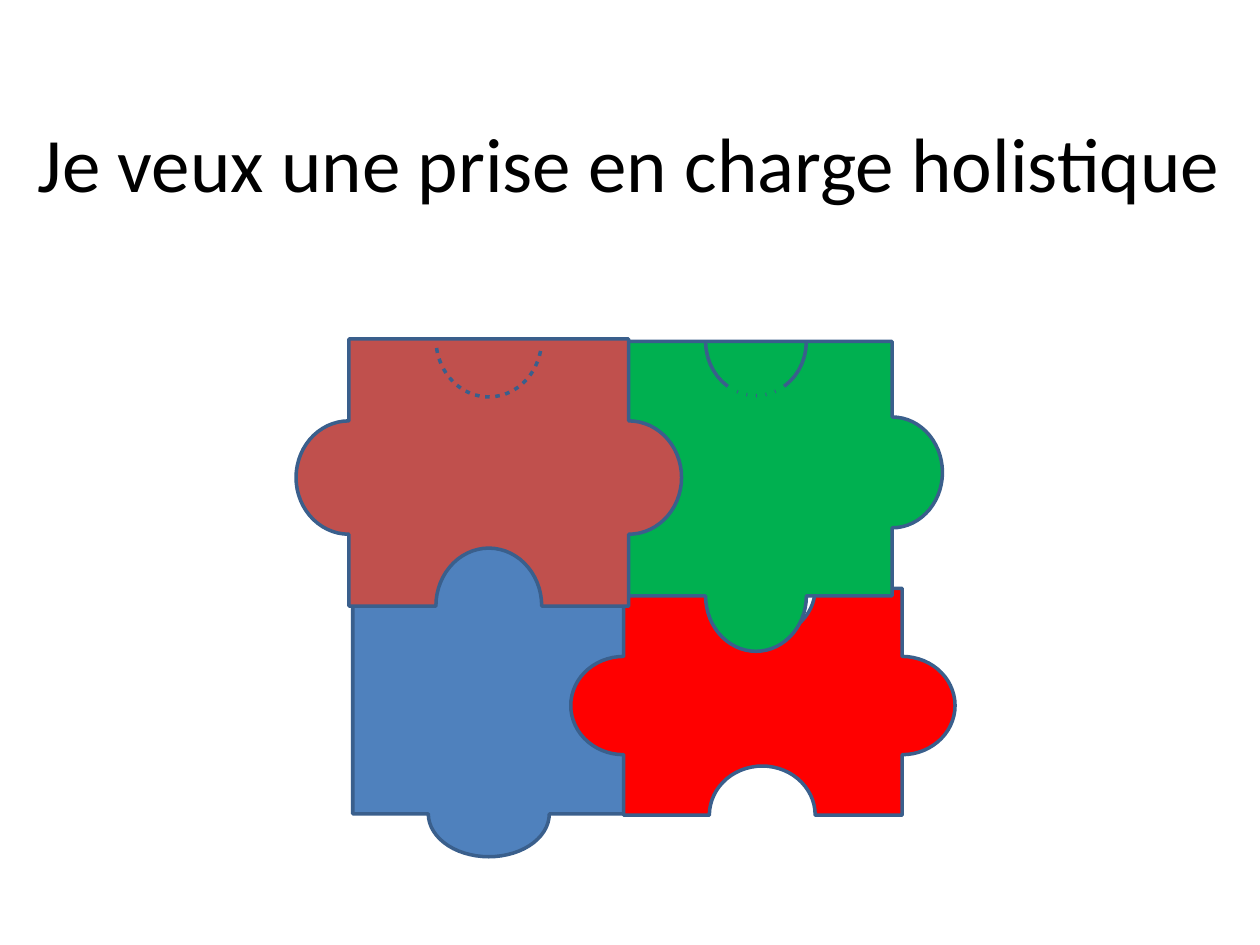
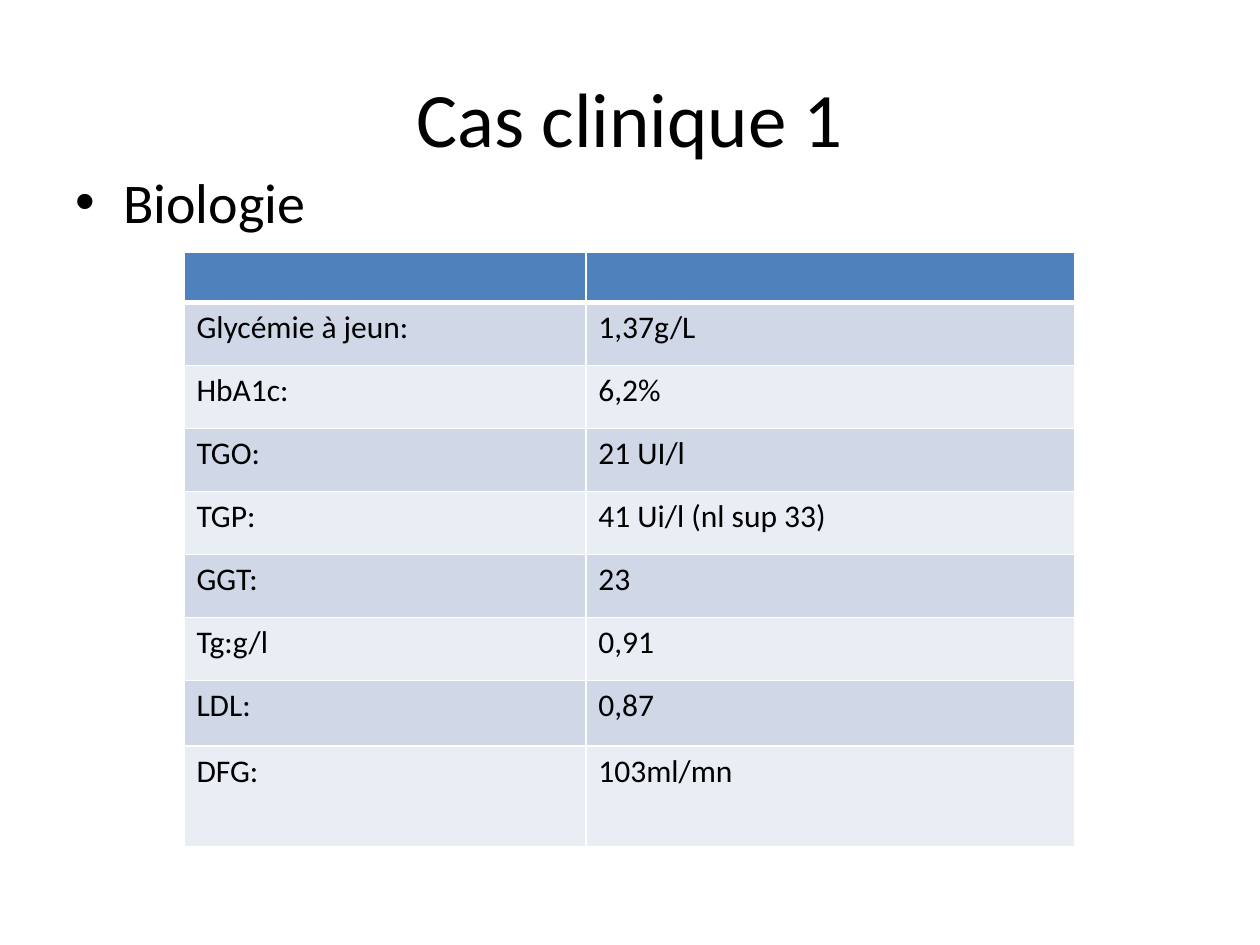
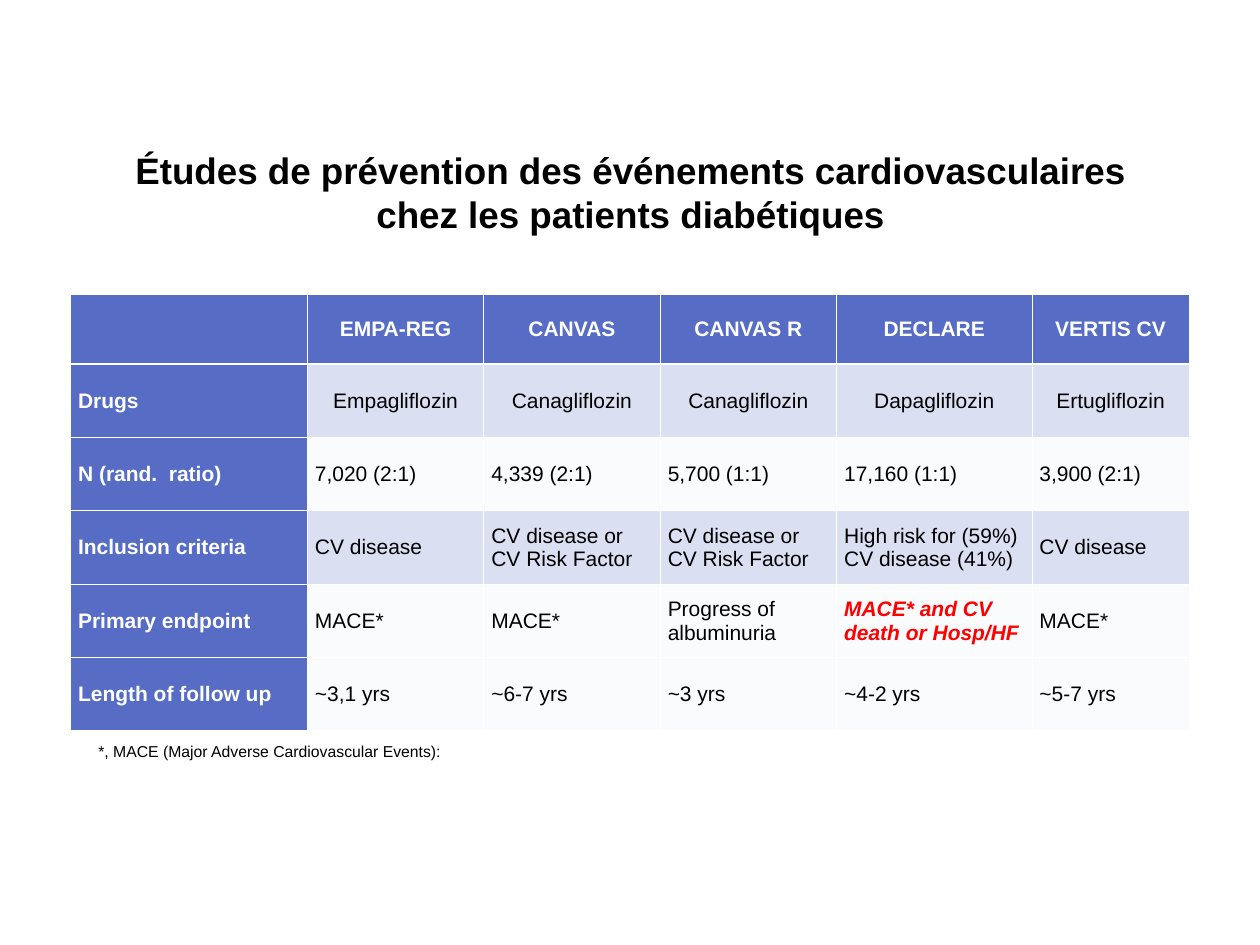
"""Build three slides on diabetes care: a puzzle, lab results and a trial table."""
from dataclasses import dataclass
from math import cos, radians, sin
from typing import Any, NamedTuple

from lxml.etree import SubElement as Sub
from pptx import Presentation
from pptx.dml.color import RGBColor as RGB
from pptx.enum.text import MSO_ANCHOR as Anchor
from pptx.enum.text import MSO_AUTO_SIZE as Auto
from pptx.enum.text import PP_ALIGN as Align
from pptx.oxml.ns import qn
from pptx.slide import Slide
from pptx.util import Emu, Pt

PX = 9144
BLACK = RGB(0x00, 0x00, 0x00)
WHITE = RGB(0xFF, 0xFF, 0xFF)
RED = RGB(0xFF, 0x00, 0x00)
GREEN = RGB(0x00, 0xB0, 0x50)
BRICK = RGB(0xC0, 0x50, 0x4D)
BLUE = RGB(0x4F, 0x81, 0xBD)
NAVY = RGB(0x3A, 0x5F, 0x8C)
MIST = RGB(0xD0, 0xD8, 0xE8)
PALE = RGB(0xE9, 0xED, 0xF4)
INDIGO = RGB(0x56, 0x6C, 0xC5)
LILAC = RGB(0xDA, 0xDF, 0xF2)
SNOW = RGB(0xF9, 0xFB, 0xFD)

Spans = list[tuple[int, int]]
Point = tuple[float, float]


class Box(NamedTuple):
    left: int
    top: int
    width: int
    height: int


class Font(NamedTuple):
    name: str
    size: int
    color: RGB = BLACK
    bold: bool = False
    italic: bool = False


class Oval(NamedTuple):
    x: int
    y: int
    rx: int
    ry: int

    def point(self, angle: float) -> Point:
        """Give the point of the oval at an angle in degrees."""
        turn = radians(angle)
        return self.x + self.rx * cos(turn), self.y + self.ry * sin(turn)


class Knob(NamedTuple):
    oval: Oval
    out: bool = True


class Trace(NamedTuple):
    oval: Oval
    spans: Spans


@dataclass
class Piece:
    fill: RGB
    box: Box
    knobs: list[Knob | None]
    traces: tuple[Trace, ...] = ()


@dataclass
class Grid:
    left: int
    top: int
    cols: list[int]
    rows: list[int]
    text: list[tuple[str, ...]]
    fills: list[RGB]
    font: Font
    edge: float
    pads: tuple[int, int]
    anchor: Anchor
    side: RGB | None = None
    mid: int = 0
    key: str = ""


HEAD = Font("Calibri", 44)
SMALL = Font("Arial", 12)

PUZZLE = [
    Piece(BLUE, Box(280, 466, 223, 180), [
        Knob(Oval(388, 466, 48, 33)), Knob(Oval(503, 557, 43, 34), False),
        Knob(Oval(388, 646, 48, 34)), None]),
    Piece(RED, Box(495, 467, 221, 180), [
        Knob(Oval(605, 467, 42, 39), False), Knob(Oval(716, 560, 42, 39)),
        Knob(Oval(605, 647, 42, 39), False), Knob(Oval(495, 560, 42, 39))]),
    Piece(GREEN, Box(493, 271, 215, 202), [
        None, Knob(Oval(708, 375, 40, 44)),
        Knob(Oval(600, 473, 40, 44)), Knob(Oval(493, 379, 41, 44), False)], (
            Trace(Oval(600, 271, 40, 43),
                  [(a, 8) for a in (*range(0, 56, 8), *range(124, 180, 8))]
                  + [(a, 1) for a in range(67, 115, 11)]),
            Trace(Oval(493, 375, 40, 43), [(a, 10) for a in range(180, 270, 10)]))),
    Piece(BRICK, Box(277, 269, 222, 212), [
        None, Knob(Oval(499, 379, 42, 45)),
        Knob(Oval(388, 481, 42, 46), False), Knob(Oval(277, 379, 42, 45))], (
            Trace(Oval(388, 269, 42, 46), [(a, 5) for a in range(12, 170, 11)]),)),
]

LABS = Grid(
    146, 200, [319, 388], [37] + [50] * 6 + [52, 80],
    [("", ""), ("Glycémie à jeun:", "1,37g/L"), ("HbA1c:", "6,2%"),
     ("TGO:", "21 UI/l"), ("TGP:", "41 Ui/l (nl sup 33)"), ("GGT:", "23"),
     ("Tg:g/l", "0,91"), ("LDL:", "0,87"), ("DFG:", "103ml/mn")],
    [BLUE] + [MIST, PALE] * 4, Font("Calibri", 18), 1, (10, 5), Anchor.TOP)

TRIALS = Grid(
    56, 234, [188, 140, 140, 140, 155, 125], [55, 58, 58, 59, 58, 58],
    [("", "EMPA-REG", "CANVAS", "CANVAS R", "DECLARE", "VERTIS CV"),
     ("Drugs", "Empagliflozin", "Canagliflozin", "Canagliflozin",
      "Dapagliflozin", "Ertugliflozin"),
     ("N (rand.  ratio)", "7,020 (2:1)", "4,339 (2:1)", "5,700 (1:1)",
      "17,160 (1:1)", "3,900 (2:1)"),
     ("Inclusion criteria", "CV disease", "CV disease or CV Risk Factor",
      "CV disease or CV Risk Factor", "High risk for (59%) CV disease (41%)",
      "CV disease"),
     ("Primary endpoint", "MACE*", "MACE*", "Progress of albuminuria",
      "MACE* and CV death or Hosp/HF", "MACE*"),
     ("Length of follow up", "~3,1 yrs", "~6-7 yrs", "~3 yrs", "~4-2 yrs",
      "~5-7 yrs")],
    [INDIGO, LILAC, SNOW, LILAC, SNOW, SNOW], SMALL, 0.5, (6, 2),
    Anchor.MIDDLE, INDIGO, 2, "MACE* and CV death or Hosp/HF")


def px(count: float) -> Emu:
    """Turn px into EMU."""
    return Emu(round(count * PX))


def style(item: Any, values: dict[str, Any]) -> None:
    """Set each attribute named in the values."""
    for name, value in values.items():
        setattr(item, name, value)


def place(shape: Any, box: Box) -> None:
    """Move and size a shape."""
    style(shape, {name: px(size) for name, size in box._asdict().items()})


def write(frame: Any, text: str, font: Font, align: Align = Align.LEFT) -> None:
    """Put one formatted paragraph in a text frame."""
    para = frame.paragraphs[0]
    para.text = text
    para.alignment = align
    for run in para.runs:
        style(run.font, {"name": font.name, "size": Pt(font.size),
                         "bold": font.bold, "italic": font.italic})
        run.font.color.rgb = font.color


def start(deck: Any, text: str, box: Box, font: Font = HEAD) -> Slide:
    """Add a slide with its title."""
    slide = deck.slides.add_slide(deck.slide_layouts[5])
    title = slide.shapes.title
    place(title, box)
    style(title.text_frame, {"auto_size": Auto.NONE, "word_wrap": True,
                             "vertical_anchor": Anchor.MIDDLE})
    write(title.text_frame, text, font, Align.CENTER)
    return slide


def note(slide: Slide, text: str, box: Box, font: Font, pad: bool = True) -> Any:
    """Add a wrapped text box and return its paragraph."""
    frame = slide.shapes.add_textbox(*map(px, box)).text_frame
    frame.word_wrap = True
    if not pad:
        style(frame, {f"margin_{side}": 0
                      for side in ("left", "right", "top", "bottom")})
    write(frame, text, font)
    return frame.paragraphs[0]


def bullet(para: Any, indent: int) -> None:
    """Give a paragraph a hanging round bullet."""
    props = para._p.get_or_add_pPr()
    props.set("marL", str(px(indent)))
    props.set("indent", str(px(-indent)))
    Sub(props, qn("a:buFont"), typeface="Arial")
    Sub(props, qn("a:buChar"), char="•")


def outline(piece: Piece) -> list[Point]:
    """Walk round a piece clockwise from its top left corner."""
    left, top, width, height = piece.box
    right, base = left + width, top + height
    points: list[Point] = []
    corners = [(left, top), (right, top), (right, base), (left, base)]
    for side, (corner, knob) in enumerate(zip(corners, piece.knobs)):
        points.append(corner)
        if knob:
            step = 6 if knob.out else -6
            points += [knob.oval.point(180 + 90 * side + step * i)
                       for i in range(31)]
    return points


def draw(slide: Slide, piece: Piece) -> None:
    """Draw a puzzle piece with its traced arcs."""
    first, *rest = [(px(x), px(y)) for x, y in outline(piece)]
    pen = slide.shapes.build_freeform(*first, scale=1.0)
    pen.add_line_segments(rest, close=True)
    for oval, spans in piece.traces:
        for angle, length in spans:
            tail, tip = (tuple(map(px, oval.point(a)))
                         for a in (angle, angle + length))
            pen.move_to(*tail)
            pen.add_line_segments([tip], close=False)
    shape = pen.convert_to_shape()
    shape.shadow.inherit = False
    shape.fill.solid()
    shape.fill.fore_color.rgb = piece.fill
    shape.line.color.rgb = NAVY
    shape.line.width = Pt(2)


def border(cell: Any, widths: dict[str, float]) -> None:
    """Draw white cell borders of the given widths."""
    props = cell._tc.get_or_add_tcPr()
    for spot, (side, width) in enumerate(widths.items()):
        line = Sub(props, qn(f"a:ln{side}"), w=str(Pt(width)))
        fill = Sub(line, qn("a:solidFill"))
        Sub(fill, qn("a:srgbClr"), val=str(WHITE))
        props.insert(spot, line)


def chart(slide: Slide, grid: Grid) -> None:
    """Draw a table from its grid."""
    box = Box(grid.left, grid.top, sum(grid.cols), sum(grid.rows))
    table = slide.shapes.add_table(
        len(grid.rows), len(grid.cols), *map(px, box)).table
    for col, width in zip(table.columns, grid.cols):
        col.width = px(width)
    for row, height in zip(table.rows, grid.rows):
        row.height = px(height)
    wide, high = map(px, grid.pads)
    thick = grid.edge * 3
    for r, texts in enumerate(grid.text):
        for c, text in enumerate(texts):
            cell = table.cell(r, c)
            lead = r == 0 or (c == 0 and grid.side is not None)
            font = grid.font
            if lead:
                font = font._replace(color=WHITE, bold=True)
            elif text and text == grid.key:
                font = font._replace(color=RED, bold=True, italic=True)
            style(cell, {"margin_left": wide, "margin_right": wide,
                         "margin_top": high, "margin_bottom": high,
                         "vertical_anchor": grid.anchor})
            middle = r < grid.mid and (r == 0 or c > 0)
            write(cell.text_frame, text, font,
                  Align.CENTER if middle else Align.LEFT)
            cell.fill.solid()
            cell.fill.fore_color.rgb = (
                grid.side if c == 0 and grid.side else grid.fills[r])
            border(cell, {"L": grid.edge, "R": grid.edge,
                          "T": thick if r == 1 else grid.edge,
                          "B": thick if r == 0 else grid.edge})


def main() -> None:
    """Build and save the deck."""
    deck = Presentation()
    style(deck, {"slide_width": px(1000), "slide_height": px(750)})

    slide = start(deck, "Je veux une prise en charge holistique",
                  Box(14, 66, 971, 125))
    for piece in PUZZLE:
        draw(slide, piece)

    slide = start(deck, "Cas clinique 1", Box(50, 30, 900, 125))
    bullet(note(slide, "Biologie", Box(50, 128, 900, 495),
                Font("Calibri", 32)), 38)
    chart(slide, LABS)

    slide = start(deck, "Études de prévention des événements cardiovasculaires\v"
                  "chez les patients diabétiques", Box(52, 112, 897, 81),
                  Font("Arial", 21, bold=True))
    note(slide, "*, MACE (Major Adverse Cardiovascular Events):",
         Box(78, 589, 535, 15), Font("Arial", 9), pad=False)
    chart(slide, TRIALS)

    deck.save("out.pptx")


if __name__ == "__main__":
    main()
